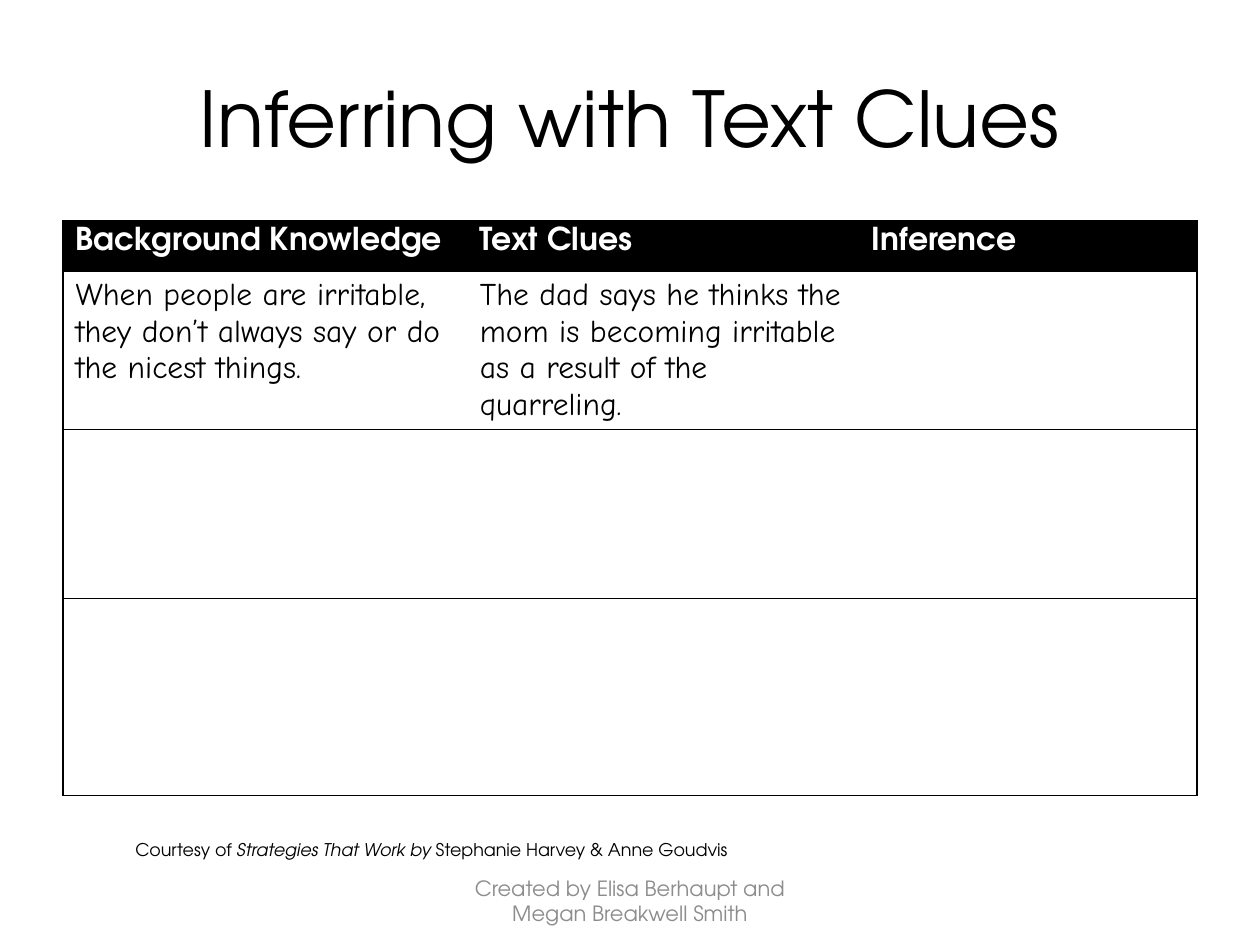
import pptx
import pptx.util
import pptx.dml.color
import pptx.enum.text
import pptx.oxml
import pptx.oxml.ns

Pt = pptx.util.Pt
ALIGN = pptx.enum.text.PP_ALIGN
ANCHOR = pptx.enum.text.MSO_ANCHOR
COLORS = {"ink": "000000", "paper": "FFFFFF", "footer": "8C8C8C"}
SANS = "TeX Gyre Adventor"
HAND = "Comic Neue"
COLUMNS = [231, 224, 193]
ROWS = [29, 90.5, 96.5, 112.5]
CELLS = [
    ["Background Knowledge", "Text Clues", "Inference"],
    ["When people are irritable, they don’t always say or do the nicest things.",
     "The dad says he thinks the mom is becoming irritable as a result of the quarreling.", ""],
    ["", "", ""],
    ["", "", ""],
]


def rgb(name):
    return pptx.dml.color.RGBColor.from_string(COLORS[name])


def add_run(p, text, color, **formats):
    r = p.add_run()
    r.text = text
    r.font.color.rgb = rgb(color)
    for key, value in formats.items():
        setattr(r.font, key, value)


def write(sp, runs, color, anchor, **formats):
    tf = sp.text_frame
    tf.word_wrap = True
    tf.vertical_anchor = anchor
    p = tf.paragraphs[0]
    p.alignment = ALIGN.CENTER
    for text, italic in runs:
        add_run(p, text, color, name=SANS, italic=italic, **formats)


def add_title(s, text):
    sp = s.shapes.title
    box = {"left": 36, "top": 21.6, "width": 648, "height": 90}
    for key, value in box.items():
        setattr(sp, key, Pt(value))
    write(sp, [(text, False)], "ink", ANCHOR.MIDDLE, size=Pt(44))


def add_text(s, box, runs, color, anchor, size):
    sp = s.shapes.add_textbox(*map(Pt, box))
    write(sp, runs, color, anchor, size=Pt(size))


def set_borders(cell, sides):
    tcPr = cell._tc.get_or_add_tcPr()
    for i, side in enumerate(("lnL", "lnR", "lnT", "lnB")):
        fill = "<a:noFill/>"
        if side in sides:
            fill = f'<a:solidFill><a:srgbClr val="{COLORS["ink"]}"/></a:solidFill>'
        ns = pptx.oxml.ns.nsdecls("a")
        tcPr.insert(i, pptx.oxml.parse_xml(f'<a:{side} {ns} w="{Pt(0.75)}">{fill}</a:{side}>'))


def add_clue_table(s):
    table = s.shapes.add_table(len(ROWS), len(COLUMNS), Pt(36), Pt(126),
                               Pt(sum(COLUMNS)), Pt(sum(ROWS))).table
    for column, width in zip(table.columns, COLUMNS):
        column.width = Pt(width)
    for i, (row, height) in enumerate(zip(table.rows, ROWS)):
        row.height = Pt(height)
        header = i == 0
        for j, cell in enumerate(row.cells):
            cell.fill.solid()
            cell.fill.fore_color.rgb = rgb("ink" if header else "paper")
            sides = {"lnT", "lnB"}
            if j == 0:
                sides.add("lnL")
            if j == len(COLUMNS) - 1:
                sides.add("lnR")
            set_borders(cell, sides)
            if CELLS[i][j]:
                add_run(cell.text_frame.paragraphs[0], CELLS[i][j],
                        "paper" if header else "ink", size=Pt(18),
                        name=SANS if header else HAND, bold=header)


def main():
    prs = pptx.Presentation()
    prs.slide_width, prs.slide_height = Pt(720), Pt(540)
    s = prs.slides.add_slide(prs.slide_layouts[5])
    add_title(s, "Inferring with Text Clues")
    add_clue_table(s)
    add_text(s, (246, 500.4, 228, 28.8),
             [("Created by Elisa Berhaupt and Megan Breakwell Smith", False)],
             "footer", ANCHOR.MIDDLE, 12)
    add_text(s, (36, 476, 421, 20),
             [("Courtesy of ", False), ("Strategies That Work by ", True),
              ("Stephanie Harvey & Anne Goudvis", False)],
             "ink", ANCHOR.TOP, 10)
    prs.save("out.pptx")


if __name__ == "__main__":
    main()
